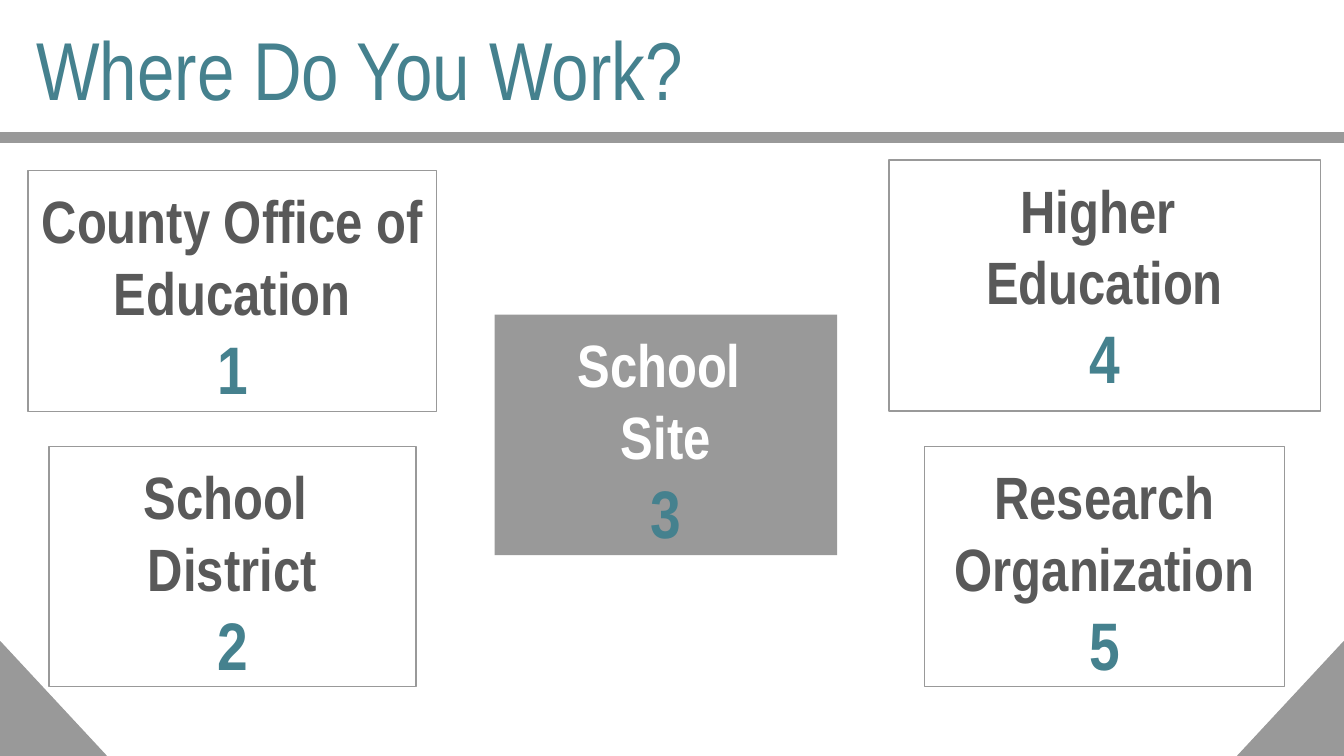
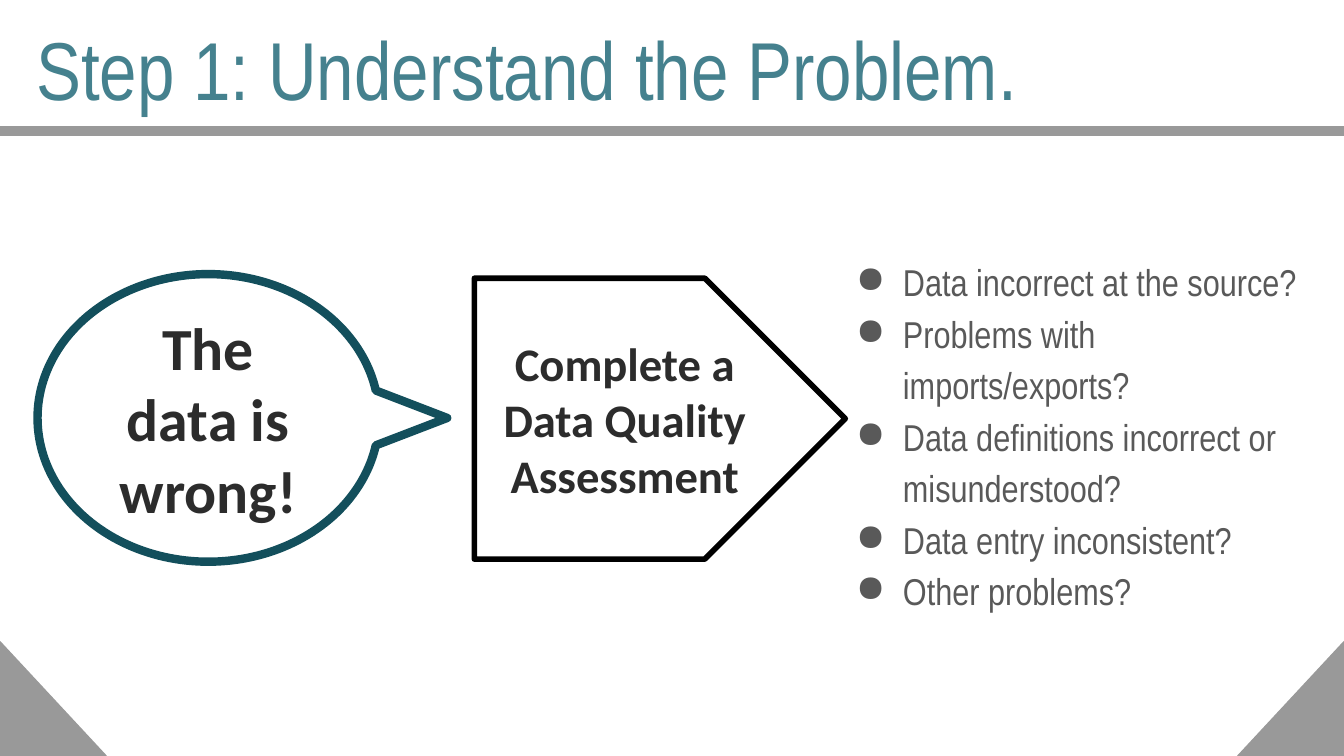
from dataclasses import dataclass, replace

from lxml.etree import SubElement
from pptx import Presentation
from pptx.dml.color import RGBColor
from pptx.enum.shapes import MSO_SHAPE as Preset
from pptx.enum.text import MSO_ANCHOR as Anchor, MSO_AUTO_SIZE as AutoSize, PP_ALIGN as Align
from pptx.oxml.ns import qn
from pptx.util import Inches, Pt

COLUMNS, ROWS = 100, 56.25


@dataclass(frozen=True)
class TextStyle:
    size: float
    color: str
    font: str = "Arial Narrow"
    bold: bool = False


@dataclass(frozen=True)
class Theme:
    white: str = "FFFFFF"
    black: str = "000000"
    gray: str = "999999"
    deep_teal: str = "134F5C"
    title: TextStyle = TextStyle(44, "45818E")
    label: TextStyle = TextStyle(32, "595959", bold=True)
    number: TextStyle = TextStyle(36, "45818E", bold=True)
    bullet: TextStyle = TextStyle(20, "595959")
    callout: TextStyle = TextStyle(32, "2C2C2C", "Calibri", True)
    step: TextStyle = TextStyle(25, "2C2C2C", "Calibri", True)


def add_bullet(paragraph, color):
    properties = paragraph._p.get_or_add_pPr()
    properties.set("marL", str(Inches(0.5)))
    properties.set("indent", str(Inches(-0.35)))
    bullet_color = SubElement(properties, qn("a:buClr"))
    SubElement(bullet_color, qn("a:srgbClr"), val=color)
    SubElement(properties, qn("a:buChar"), char="●")


def write(frame, paragraphs, *, align=Align.LEFT, anchor=Anchor.TOP, bulleted=False,
          spacing=1.0, after=0, inset=0.1):
    """Fill a frame; each paragraph is a list of (text, style) runs."""
    frame.word_wrap = True
    frame.auto_size = AutoSize.NONE
    frame.vertical_anchor = anchor
    frame.margin_left = frame.margin_right = Inches(0.1)
    frame.margin_top = frame.margin_bottom = Inches(inset)
    for index, runs in enumerate(paragraphs):
        paragraph = frame.add_paragraph() if index else frame.paragraphs[0]
        if bulleted:
            add_bullet(paragraph, runs[0][1].color)
        paragraph.alignment = align
        paragraph.line_spacing = spacing
        paragraph.space_before, paragraph.space_after = Pt(0), Pt(after)
        for text, style in runs:
            for line_index, line in enumerate(text.split("\n")):
                if line_index:
                    paragraph.add_line_break()
                if line:
                    run = paragraph.add_run()
                    run.text = line
                    run.font.name, run.font.size = style.font, Pt(style.size)
                    run.font.bold = style.bold
                    run.font.color.rgb = RGBColor.from_string(style.color)


class Deck:
    def __init__(self, theme):
        self.theme = theme
        self.presentation = Presentation()
        self.presentation.slide_width = Inches(10)
        self.presentation.slide_height = Inches(5.625)
        self.slide = None

    def area(self, left, top, width, height):
        """Turn grid columns and rows into slide lengths."""
        column = self.presentation.slide_width / COLUMNS
        row = self.presentation.slide_height / ROWS
        return [round(value) for value in (left * column, top * row, width * column, height * row)]

    def start_slide(self, title, title_height, band_top):
        self.slide = self.presentation.slides.add_slide(self.presentation.slide_layouts[5])
        heading = self.slide.shapes.title
        heading.left, heading.top, heading.width, heading.height = self.area(
            1.7, 0.4, 93.2, title_height)
        write(heading.text_frame, [[(title, self.theme.title)]])
        # Band under the title and the two bottom corners
        gray = self.theme.gray
        self.shape(Preset.RECTANGLE, (0, band_top, COLUMNS, 0.7), fill=gray, line=gray)
        width, height = 7.9, 8.5
        for left in (0, COLUMNS - width):
            corner = self.shape(Preset.RIGHT_TRIANGLE, (left, ROWS - height, width, height),
                                fill=gray, line=gray)
            if left:
                corner._element.spPr.get_or_add_xfrm().set("flipH", "1")

    def shape(self, preset, place, *, fill=None, line=None, weight=0.75, adjustments=()):
        shape = self.slide.shapes.add_shape(preset, *self.area(*place))
        shape.shadow.inherit = False
        if fill:
            shape.fill.solid()
            shape.fill.fore_color.rgb = RGBColor.from_string(fill)
        else:
            shape.fill.background()
        if line:
            shape.line.color.rgb = RGBColor.from_string(line)
            shape.line.width = Pt(weight)
            SubElement(shape.line._get_or_add_ln(), qn("a:round"))
        else:
            shape.line.fill.background()
        for index, value in enumerate(adjustments):
            shape.adjustments[index] = value
        return shape

    def card(self, number, label, center, top, width, height=17.9, filled=False):
        gray, style = self.theme.gray, self.theme.label
        place = (center - width / 2, top, width, height)
        if filled:
            card = self.shape(Preset.RECTANGLE, place, fill=gray)
            style = replace(style, color=self.theme.white)
        else:
            card = self.shape(Preset.RECTANGLE, place, line=gray)
        write(card.text_frame, [[(label + "\n", style), (str(number), self.theme.number)]],
              align=Align.CENTER, after=12)

    def outlined(self, preset, place, text, style, line, weight, adjustments, inset=0.1):
        shape = self.shape(preset, place, fill=self.theme.white, line=line, weight=weight,
                           adjustments=adjustments)
        write(shape.text_frame, [[(text, style)]], align=Align.CENTER,
              anchor=Anchor.MIDDLE, inset=inset)

    def bullets(self, place, items):
        box = self.slide.shapes.add_textbox(*self.area(*place))
        write(box.text_frame, [[(item, self.theme.bullet)] for item in items],
              bulleted=True, spacing=1.15)


def build_workplaces(deck):
    deck.start_slide("Where Do You Work?", 6.3, 9.9)
    left, middle, right = 17.3, 49.55, 82.2
    lower_row = 33.2
    deck.card(1, "County Office of Education", left, 12.7, 30.4)
    deck.card(2, "School \nDistrict", left, lower_row, 27.3)
    deck.card(3, "School \nSite", middle, 23.4, 25.5, filled=True)
    deck.card(4, "Higher \nEducation", right, 11.9, 32.1, height=18.7)
    deck.card(5, "Research Organization", right, lower_row, 26.8)


def build_problem(deck):
    theme = deck.theme
    deck.start_slide("Step 1: Understand the Problem.", 8.5, 9.4)
    deck.bullets((61.2, 17.8, 37.1, 29.7), [
        "Data incorrect at the source?",
        "Problems with imports/exports?",
        "Data definitions incorrect or misunderstood?",
        "Data entry inconsistent?",
        "Other problems?",
    ])
    # Speech bubble, then the step that follows from it
    deck.outlined(Preset.OVAL_CALLOUT, (2.8, 20.4, 25.4, 21.4), "The data is wrong!",
                  theme.callout, theme.deep_teal, 4.5, (0.7, 0), inset=0.05)
    deck.outlined(Preset.PENTAGON, (35.3, 20.7, 27.6, 20.9),
                  "Complete a Data Quality Assessment", theme.step, theme.black, 3, (0.5,))


def main():
    deck = Deck(Theme())
    build_workplaces(deck)
    build_problem(deck)
    deck.presentation.save("out.pptx")


if __name__ == "__main__":
    main()
